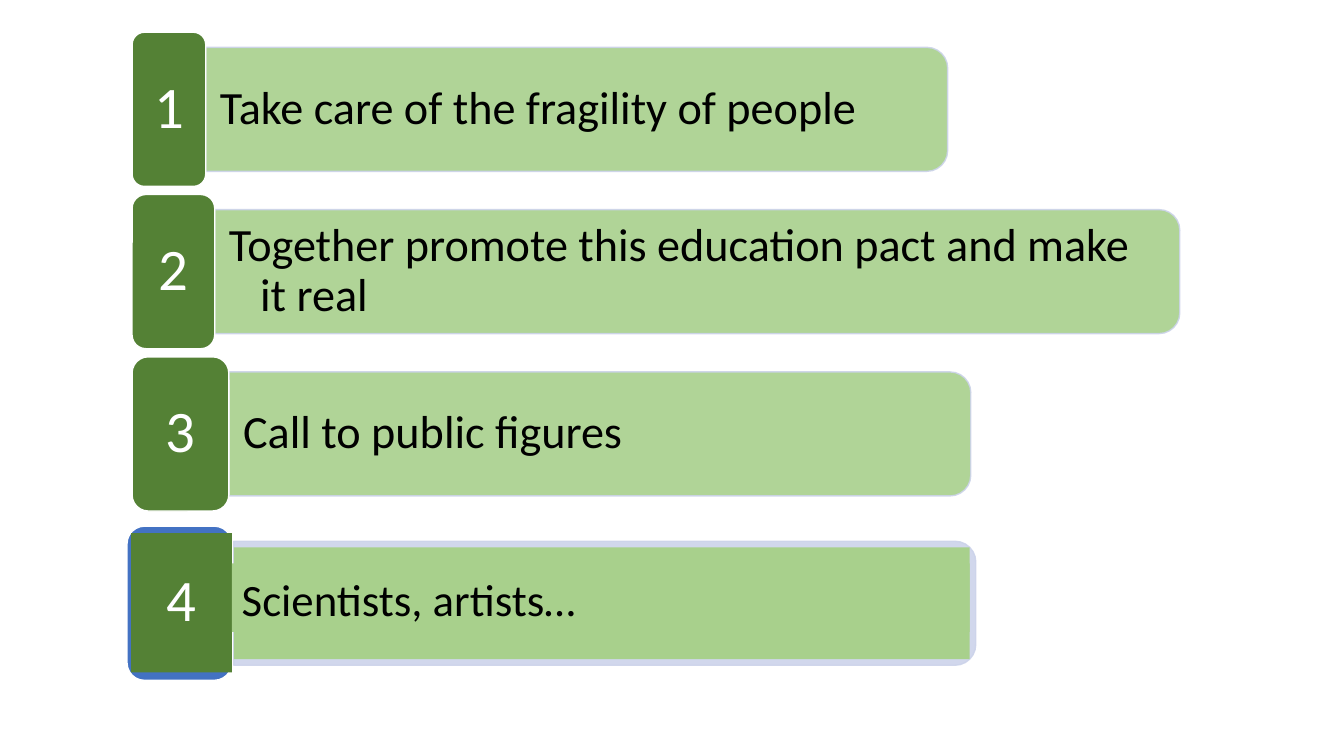
from lxml.etree import SubElement
from pptx import Presentation
from pptx.dml.color import RGBColor
from pptx.enum.shapes import MSO_SHAPE
from pptx.enum.text import MSO_ANCHOR, PP_ALIGN
from pptx.oxml.ns import qn
from pptx.util import Inches, Pt

COLS, ROWS = 100, 75
GREEN, LIGHT, PALE, BLUE = "548135", "A8D08C", "CCD3EA", "4372C3"
WHITE, BLACK = "FFFFFF", "000000"


def color(fill, code, alpha=None):
    fill.solid()
    fill.fore_color.rgb = RGBColor.from_string(code)
    if alpha:
        tone = fill._xPr.find(".//" + qn("a:srgbClr"))
        SubElement(tone, qn("a:alpha")).set("val", str(alpha * 1000))


def write(shape, text, size=33, code=BLACK, align=PP_ALIGN.LEFT, space=0.9,
          anchor=MSO_ANCHOR.MIDDLE, inset=(0.14, 0.07), hang=0):
    frame = shape.text_frame
    frame.word_wrap = True
    frame.vertical_anchor = anchor
    frame.margin_left = frame.margin_right = Inches(inset[0])
    frame.margin_top = frame.margin_bottom = Inches(inset[1])
    para = frame.paragraphs[0]
    para.alignment, para.line_spacing = align, space
    if hang:
        props = para._p.get_or_add_pPr()
        props.set("marL", str(Inches(hang)))
        props.set("indent", str(-Inches(hang)))
    run = para.add_run()
    run.text = text
    run.font.name, run.font.size = "Calibri", Pt(size)
    color(run.font.fill, code)


class Deck:
    """Style and current slide; lengths are grid columns and rows."""

    def __init__(self):
        self.show = Presentation()
        self.show.slide_width = Inches(13.33)
        self.show.slide_height = Inches(7.5)
        self.slide = self.show.slides.add_slide(self.show.slide_layouts[6])

    def place(self, x, y, wide, high):
        col, row = self.show.slide_width / COLS, self.show.slide_height / ROWS
        return [round(n) for n in (x * col, y * row, wide * col, high * row)]

    def shape(self, kind, box, fill, line=None, alpha=None):
        item = self.slide.shapes.add_shape(kind, *box)
        item.shadow.inherit = False
        color(item.fill, fill, alpha)
        if line:
            color(item.line.fill, line, alpha)
            item.line.width = Pt(1)
        else:
            item.line.fill.background()
        return item

    def block(self, x, y, wide, high, fill):
        return self.shape(MSO_SHAPE.RECTANGLE, self.place(x, y, wide, high), fill)

    def tab(self, x, y, wide, fill=GREEN):
        box = self.place(x, y, wide, 15.3)
        item = self.shape(MSO_SHAPE.ROUNDED_RECTANGLE, box, fill, WHITE)
        item.adjustments[0] = 0.167
        return item

    def bar(self, x, y, wide, fill=LIGHT):
        """Bar rounded on its right side: a quarter turn of a top-rounded one."""
        left, top, long, thick = self.place(x, y, wide, 12.3)
        shift = (long - thick) // 2
        box = left + shift, top - shift, thick, long
        item = self.shape(MSO_SHAPE.ROUND_2_SAME_RECTANGLE, box, fill, PALE, 90)
        item.adjustments[0], item.adjustments[1] = 0.167, 0
        item.rotation = 90

    def label(self, x, y, wide, high, text, **style):
        box = self.place(x, y, wide, high)
        write(self.slide.shapes.add_textbox(*box), text, **style)

    def digit(self, shape, num):
        write(shape, str(num), size=42, code=WHITE,
              align=PP_ALIGN.CENTER, inset=(0, 0))


def main():
    deck = Deck()
    left, top, pitch = 9.83, 3.2, 16.1
    steps = [
        ("Take care of the fragility of people", 5.48, 55.2),
        ("Together promote this education pact and make it real", 6.15, 71.8),
        ("Call to public figures", 7.2, 55.2),
    ]
    for i, (text, wide, long) in enumerate(steps):
        x, y = left + wide, top + i * pitch
        deck.bar(x, y + 1.5, long)
        deck.label(x, y + 2.1, long - 0.45, 11.1, text, hang=0.31)
        deck.digit(deck.tab(left, y, wide), i + 1)

    last = 52.2
    deck.tab(9.45, last, 7.8, BLUE)
    deck.digit(deck.block(9.75, last + 0.7, 7.5, 13.8, GREEN), 4)
    deck.bar(17.4, last + 1.5, 55.2, PALE)
    deck.block(17.4, last + 2.1, 54.75, 11.1, LIGHT)
    note = deck.block(17.25, last + 3.7, 54.9, 6.8, LIGHT)
    write(note, "Scientists, artists…", size=32, space=1.07,
          anchor=MSO_ANCHOR.TOP, inset=(0.1, 0.05))
    deck.show.save("out.pptx")


if __name__ == "__main__":
    main()
